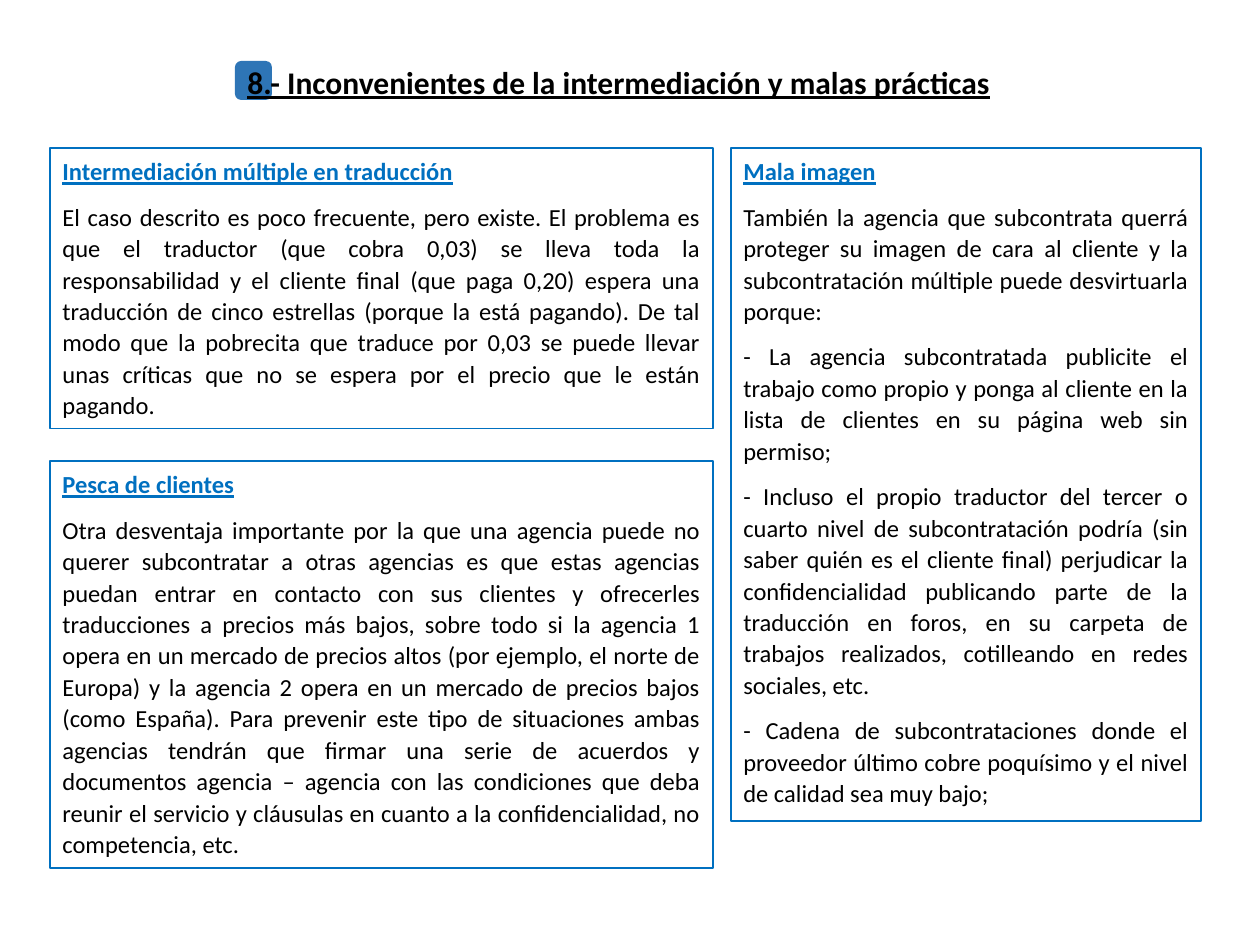
import pptx
import pptx.dml.color
import pptx.enum.shapes
import pptx.enum.text
import pptx.util

PX = 914400 // 126
BLUE = "0070C0"
BLACK = "000000"
SHAPES = pptx.enum.shapes.MSO_SHAPE
ALIGN = pptx.enum.text.PP_ALIGN


def color(value):
    return pptx.dml.color.RGBColor.from_string(value)


def write(frame, text, size=14, fill=BLACK, heading=False, align=ALIGN.JUSTIFY):
    """Add a paragraph, using the empty first one if there is no text yet."""
    paragraph = frame.add_paragraph() if frame.text else frame.paragraphs[0]
    paragraph.alignment = align
    paragraph.line_spacing = 1.07
    paragraph.space_after = pptx.util.Pt(8)
    run = paragraph.add_run()
    run.text = text
    run.font.name = "Calibri"
    run.font.size = pptx.util.Pt(size)
    run.font.bold = run.font.underline = heading
    run.font.color.rgb = color(fill)


presentation = pptx.Presentation()
presentation.slide_width = 1260 * PX
presentation.slide_height = 945 * PX
slide = presentation.slides.add_slide(presentation.slide_layouts[6])

# Title with its number marker
marker = slide.shapes.add_shape(
    SHAPES.ROUNDED_RECTANGLE, 235 * PX, 61 * PX, 37 * PX, 39 * PX)
marker.shadow.inherit = False
marker.fill.solid()
marker.fill.fore_color.rgb = color("2E75B6")
marker.line.fill.background()

title = slide.shapes.add_textbox(235 * PX, 54 * PX, 794 * PX, 54 * PX)
title.text_frame.word_wrap = True
write(title.text_frame, "8.- Inconvenientes de la intermediación y malas prácticas",
      size=18, heading=True, align=ALIGN.LEFT)

# Outlined boxes: left, top, width, height, heading, paragraphs
boxes = [
    (50, 148, 663, 281, "Intermediación múltiple en traducción", [
        "El caso descrito es poco frecuente, pero existe. El problema es que el "
        "traductor (que cobra 0,03) se lleva toda la responsabilidad y el cliente "
        "final (que paga 0,20) espera una traducción de cinco estrellas (porque la "
        "está pagando). De tal modo que la pobrecita que traduce por 0,03 se puede "
        "llevar unas críticas que no se espera por el precio que le están pagando.",
    ]),
    (50, 461, 663, 407, "Pesca de clientes", [
        "Otra desventaja importante por la que una agencia puede no querer "
        "subcontratar a otras agencias es que estas agencias puedan entrar en "
        "contacto con sus clientes y ofrecerles traducciones a precios más bajos, "
        "sobre todo si la agencia 1 opera en un mercado de precios altos (por "
        "ejemplo, el norte de Europa) y la agencia 2 opera en un mercado de precios "
        "bajos (como España). Para prevenir este tipo de situaciones ambas agencias "
        "tendrán que firmar una serie de acuerdos y documentos agencia – agencia con "
        "las condiciones que deba reunir el servicio y cláusulas en cuanto a la "
        "confidencialidad, no competencia, etc.",
    ]),
    (731, 148, 470, 673, "Mala imagen", [
        "También la agencia que subcontrata querrá proteger su imagen de cara al "
        "cliente y la subcontratación múltiple puede desvirtuarla porque:",
        "- La agencia subcontratada publicite el trabajo como propio y ponga al "
        "cliente en la lista de clientes en su página web sin permiso;",
        "- Incluso el propio traductor del tercer o cuarto nivel de subcontratación "
        "podría (sin saber quién es el cliente final) perjudicar la "
        "confidencialidad publicando parte de la traducción en foros, en su carpeta "
        "de trabajos realizados, cotilleando en redes sociales, etc.",
        "- Cadena de subcontrataciones donde el proveedor último cobre poquísimo y "
        "el nivel de calidad sea muy bajo;",
    ]),
]
for left, top, width, height, heading, paragraphs in boxes:
    box = slide.shapes.add_shape(
        SHAPES.RECTANGLE, left * PX, top * PX, width * PX, height * PX)
    box.shadow.inherit = False
    box.fill.background()
    box.line.color.rgb = color(BLUE)
    box.line.width = pptx.util.Pt(0.75)
    frame = box.text_frame
    frame.word_wrap = True
    frame.vertical_anchor = pptx.enum.text.MSO_ANCHOR.TOP
    write(frame, heading, fill=BLUE, heading=True)
    for text in paragraphs:
        write(frame, text)

presentation.save("out.pptx")
